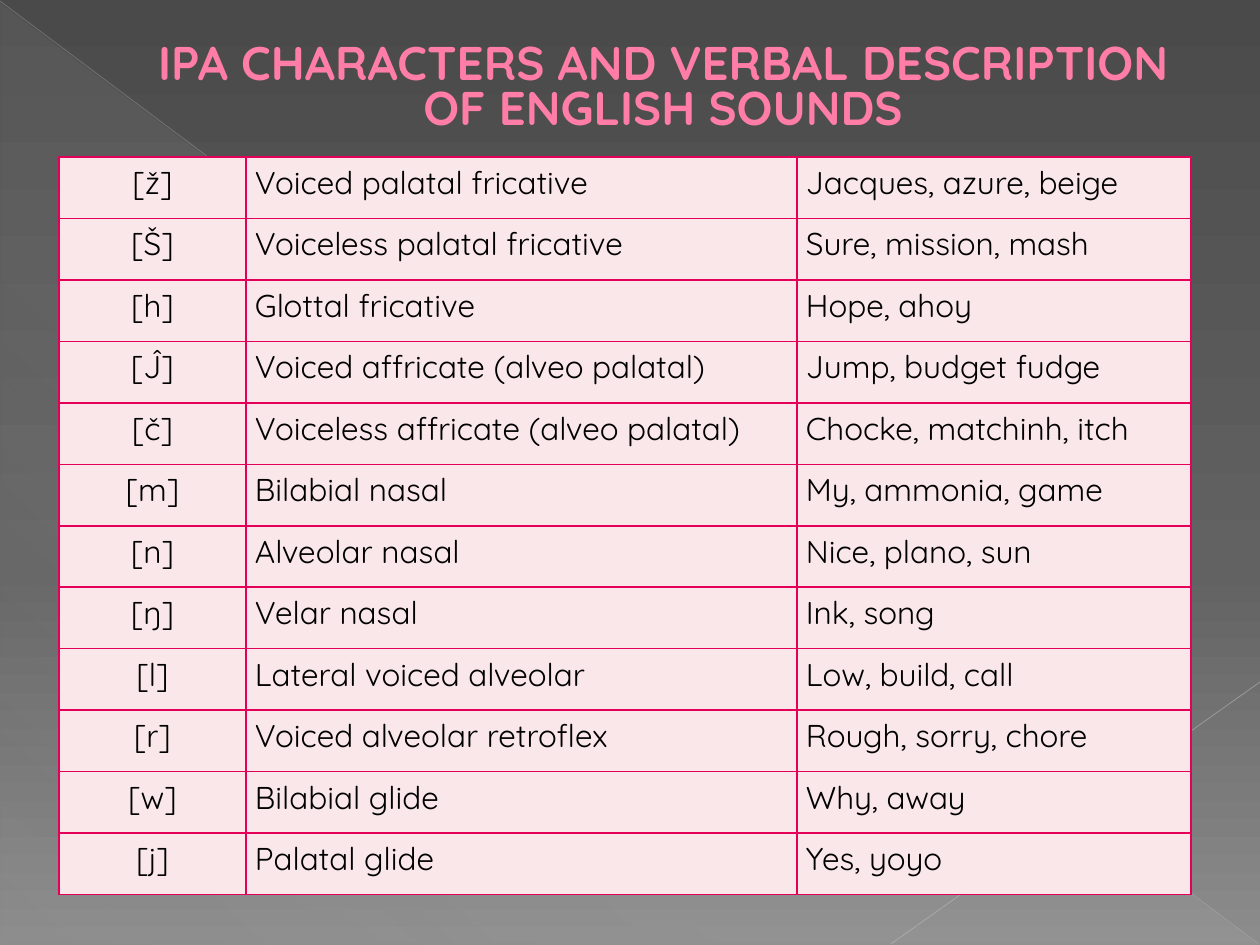
from dataclasses import dataclass

from lxml.etree import SubElement
from pptx import Presentation
from pptx.dml.color import RGBColor
from pptx.enum.shapes import MSO_CONNECTOR as CONNECTOR, MSO_SHAPE as SHAPE
from pptx.enum.text import MSO_ANCHOR as ANCHOR, PP_ALIGN as ALIGN
from pptx.oxml.ns import qn
from pptx.util import Pt


@dataclass(frozen=True)
class Theme:
    font: str = "Quicksand"
    title_size: int = 27
    cell_size: int = 18
    title: str = "FF7DA7"
    title_outline: str = "B12761"
    text: str = "000000"
    cell: str = "FAE7EA"
    border: str = "E40059"
    backdrop: tuple = ((0, "4A4A4A", 100), (60, "626262", 100), (100, "8C8C8C", 100))
    triangle: tuple = ((0, "D2D2D2", 10), (70, "D2D2D2", 8), (100, "D2D2D2", 1))
    long_ray: str = "BFBFBF"
    short_ray: str = "C6C6C6"


THEME = Theme()
SLIDE_SIZE = (1260, 945)
COLUMN_WIDTHS = (187, 551, 394)
COLUMN_ALIGNS = (ALIGN.CENTER, ALIGN.JUSTIFY, ALIGN.JUSTIFY)
TABLE_HEIGHT = 738
TITLE = "IPA CHARACTERS AND VERBAL DESCRIPTION OF ENGLISH SOUNDS"
SOUNDS = (
    ("[ž]", "Voiced palatal fricative", "Jacques, azure, beige"),
    ("[Š]", "Voiceless palatal fricative", "Sure, mission, mash"),
    ("[h]", "Glottal fricative", "Hope, ahoy"),
    ("[Ĵ]", "Voiced affricate (alveo palatal)", "Jump, budget fudge"),
    ("[č]", "Voiceless affricate (alveo palatal)", "Chocke, matchinh, itch"),
    ("[m]", "Bilabial nasal", "My, ammonia, game"),
    ("[n]", "Alveolar nasal", "Nice, plano, sun"),
    ("[ŋ]", "Velar nasal", "Ink, song"),
    ("[l]", "Lateral voiced alveolar", "Low, build, call"),
    ("[r]", "Voiced alveolar retroflex", "Rough, sorry, chore"),
    ("[w]", "Bilabial glide", "Why, away"),
    ("[j]", "Palatal glide", "Yes, yoyo"),
)


def px(length):
    return round(length * 914400 / 126)


def rgb(code):
    return RGBColor.from_string(code)


def add_color(parent, code, opacity=100):
    color = SubElement(parent, qn("a:srgbClr"), val=code)
    if opacity < 100:
        SubElement(color, qn("a:alpha"), val=str(opacity * 1000))


def add_outline(parent, tag, code, points):
    outline = SubElement(parent, qn(tag), w=str(Pt(points)))
    add_color(SubElement(outline, qn("a:solidFill")), code)
    return outline


def set_gradient(owner, stops, angle):
    gradient = SubElement(owner, qn("a:gradFill"), rotWithShape="1")
    stop_list = SubElement(gradient, qn("a:gsLst"))
    for position, code, opacity in stops:
        stop = SubElement(stop_list, qn("a:gs"), pos=str(position * 1000))
        add_color(stop, code, opacity)
    SubElement(gradient, qn("a:lin"), ang=str(angle * 60000), scaled="0")
    owner.replace(owner.find(qn("a:solidFill")), gradient)


def set_font(paragraph, size, code, bold=False):
    font = paragraph.font
    font.name = THEME.font
    font.size = Pt(size)
    font.bold = bold
    font.color.rgb = rgb(code)


def add_backdrop(slide):
    slide.background.fill.solid()
    set_gradient(next(slide.element.iter(qn("p:bgPr"))), THEME.backdrop, 90)


def add_triangle(slide):
    triangle = slide.shapes.add_shape(
        SHAPE.RIGHT_TRIANGLE, px(1), px(3), px(1258), px(942)
    )
    triangle.shadow.inherit = False
    triangle.line.fill.background()
    triangle.fill.solid()
    set_gradient(triangle.element.spPr, THEME.triangle, 133)


def add_ray(slide, start, end, code, points, opacity):
    ray = slide.shapes.add_connector(CONNECTOR.STRAIGHT, *map(px, start + end))
    ray.line.width = Pt(points)
    ray.line.color.rgb = rgb(code)
    properties = ray.element.spPr
    color = next(properties.iter(qn("a:srgbClr")))
    SubElement(color, qn("a:alpha"), val=str(opacity * 1000))
    SubElement(properties, qn("a:effectLst"))


def fill_cell(cell, text, align):
    cell.margin_left = cell.margin_right = px(9)
    cell.margin_top = cell.margin_bottom = 0
    cell.text = text
    paragraph = cell.text_frame.paragraphs[0]
    paragraph.alignment = align
    paragraph.line_spacing = 1.15
    set_font(paragraph, THEME.cell_size, THEME.text)
    properties = cell._tc.get_or_add_tcPr()
    for side in ("a:lnL", "a:lnR", "a:lnT", "a:lnB"):
        add_outline(properties, side, THEME.border, 1)
    cell.fill.solid()
    cell.fill.fore_color.rgb = rgb(THEME.cell)


def add_sound_table(slide):
    sound_table = slide.shapes.add_table(
        len(SOUNDS), len(COLUMN_WIDTHS),
        px(59), px(157), px(sum(COLUMN_WIDTHS)), px(TABLE_HEIGHT),
    ).table
    for column, width in zip(sound_table.columns, COLUMN_WIDTHS):
        column.width = px(width)
    for row, sound in zip(sound_table.rows, SOUNDS):
        row.height = px(TABLE_HEIGHT / len(SOUNDS))
        for cell, text, align in zip(row.cells, sound, COLUMN_ALIGNS):
            fill_cell(cell, text, align)


def add_title(slide):
    frame = slide.shapes.add_textbox(px(63), px(36), px(1134), px(170)).text_frame
    frame.word_wrap = True
    frame.vertical_anchor = ANCHOR.TOP
    frame.margin_left = px(78)
    frame.margin_right = px(12)
    frame.margin_top = px(8)
    paragraph = frame.paragraphs[0]
    paragraph.text = TITLE
    paragraph.alignment = ALIGN.CENTER
    paragraph.line_spacing = 0.8
    set_font(paragraph, THEME.title_size, THEME.title, bold=True)
    properties = next(paragraph._p.iter(qn("a:defRPr")))
    properties.insert(0, add_outline(properties, "a:ln", THEME.title_outline, 0.5))


def main():
    deck = Presentation()
    deck.slide_width, deck.slide_height = map(px, SLIDE_SIZE)
    slide = deck.slides.add_slide(deck.slide_layouts[6])
    add_backdrop(slide)
    add_triangle(slide)
    add_ray(slide, (0, 1), (1259, 944), THEME.long_ray, 0.39, 35)
    add_ray(slide, (1260, 682), (891, 944), THEME.short_ray, 0.47, 45)
    add_sound_table(slide)
    add_title(slide)
    deck.save("out.pptx")


if __name__ == "__main__":
    main()
